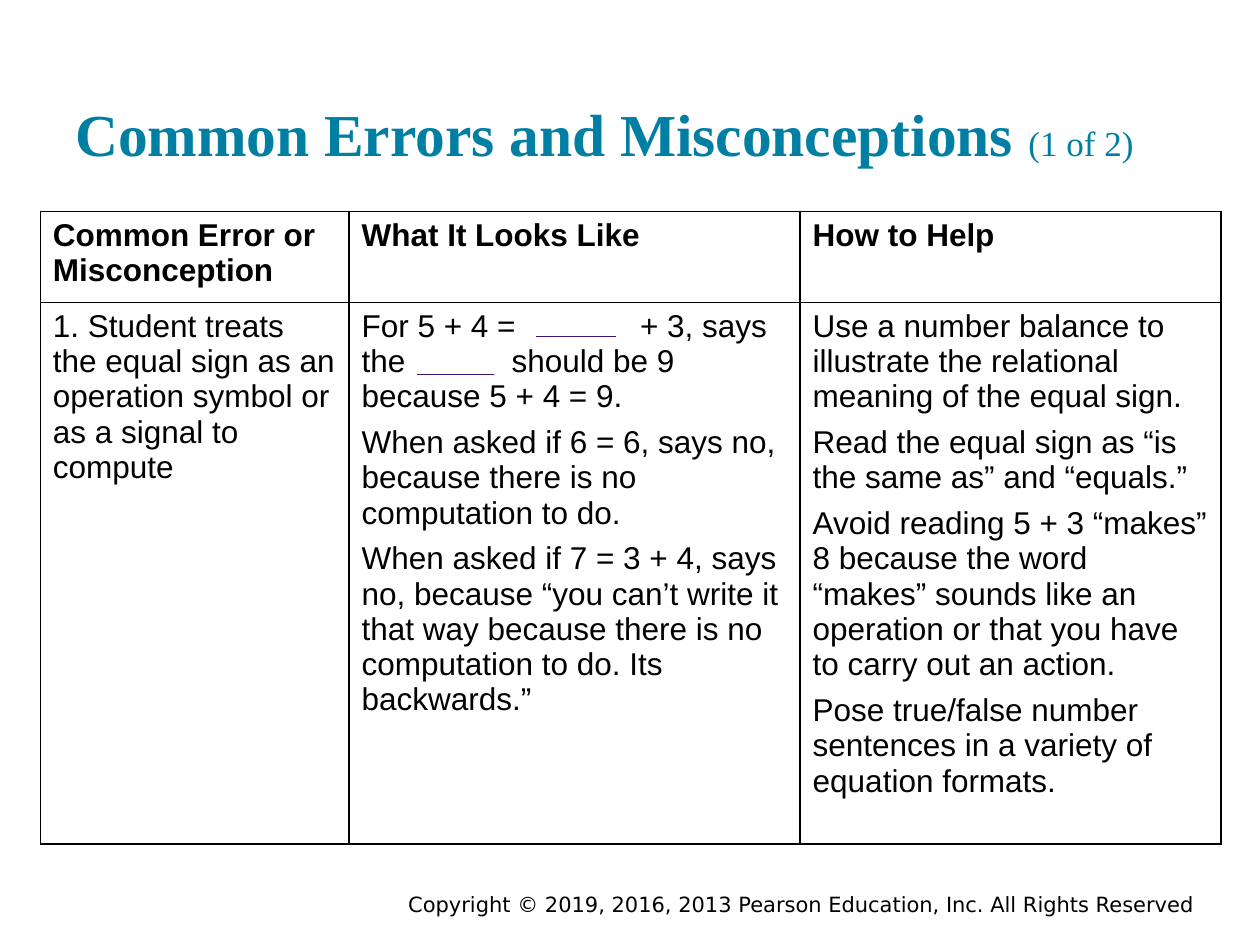
from lxml import etree
from pptx import Presentation
from pptx.dml.color import RGBColor
from pptx.enum.shapes import MSO_CONNECTOR
from pptx.enum.text import MSO_ANCHOR, PP_ALIGN
from pptx.oxml.ns import qn
from pptx.util import Inches, Pt

COLORS = {"title": "007FA3", "text": "000000", "border": "000000", "blank": "3A1281"}


def style(font, name, size, color, bold=False):
    font.name, font.size, font.bold = name, Pt(size), bold
    font.color.rgb = RGBColor.from_string(COLORS[color])


def add_text_box(left, top, width, height, anchor):
    frame = slide.shapes.add_textbox(*map(Inches, (left, top, width, height))).text_frame
    frame.word_wrap = True
    frame.vertical_anchor = anchor
    return frame


presentation = Presentation()
presentation.slide_width, presentation.slide_height = Inches(10), Inches(7.5)
slide = presentation.slides.add_slide(presentation.slide_layouts[6])

# Copyright line
frame = add_text_box(2.92, 7.05, 6.66, 0.25, MSO_ANCHOR.MIDDLE)
paragraph = frame.paragraphs[0]
paragraph.text = "Copyright © 2019, 2016, 2013 Pearson Education, Inc. All Rights Reserved"
paragraph.alignment = PP_ALIGN.RIGHT
style(paragraph.font, "DejaVu Sans", 12, "text")

# Title
frame = add_text_box(0.5, 0.24, 9, 1.2, MSO_ANCHOR.BOTTOM)
frame.margin_top = frame.margin_bottom = Inches(0.1)
for text, size, bold in [("Common Errors and Misconceptions ", 34, True), ("(1 of 2)", 20, False)]:
    run = frame.paragraphs[0].add_run()
    run.text = text
    style(run.font, "Times New Roman", size, "title", bold)

# Table: each cell is a list of paragraphs
rows = [
    [["Common Error or", "Misconception"], ["What It Looks Like"], ["How to Help"]],
    [
        ["1. Student treats the equal sign as an operation symbol or as a signal to compute"],
        [
            "For 5 + 4 =\t+ 3, says the\tshould be 9 because 5 + 4 = 9.",
            "When asked if 6 = 6, says no, because there is no computation to do.",
            "When asked if 7 = 3 + 4, says no, because “you can’t write it that way "
            "because there is no computation to do. Its backwards.”",
        ],
        [
            "Use a number balance to illustrate the relational meaning of the equal sign.",
            "Read the equal sign as “is the same as” and “equals.”",
            "Avoid reading 5 + 3 “makes” 8 because the word “makes” sounds like an "
            "operation or that you have to carry out an action.",
            "Pose true/false number sentences in a variety of equation formats.",
        ],
    ],
]
column_widths = [2.45, 3.58, 3.34]
row_heights = [0.72, 4.3]
blank_tabs = [1.19, 2.21]  # where the text resumes after each blank

table = slide.shapes.add_table(
    len(rows), len(column_widths), Inches(0.32), Inches(1.68),
    Inches(sum(column_widths)), Inches(sum(row_heights))).table
for column, width in zip(table.columns, column_widths):
    column.width = Inches(width)
for row, height in zip(table.rows, row_heights):
    row.height = Inches(height)

for row_index, row in enumerate(rows):
    for column_index, texts in enumerate(row):
        cell = table.cell(row_index, column_index)
        # Borders come before the fill in the cell properties
        properties = cell._tc.get_or_add_tcPr()
        for side in ("a:lnL", "a:lnR", "a:lnT", "a:lnB"):
            border = etree.SubElement(properties, qn(side), w=str(Pt(1)))
            fill = etree.SubElement(border, qn("a:solidFill"))
            etree.SubElement(fill, qn("a:srgbClr"), val=COLORS["border"])
        cell.fill.background()

        for index, text in enumerate(texts):
            frame = cell.text_frame
            paragraph = frame.add_paragraph() if index else frame.paragraphs[0]
            paragraph.text = text
            if index and row_index:
                paragraph.space_before = Pt(6)
            if "\t" in text:
                tab_list = etree.SubElement(paragraph._p.get_or_add_pPr(), qn("a:tabLst"))
                for position in blank_tabs:
                    etree.SubElement(tab_list, qn("a:tab"), pos=str(Inches(position)), algn="l")
            style(paragraph.font, "Arial", 18, "text", bold=row_index == 0)

# Blanks to fill in
for left, right, y in [(4.25, 4.89, 2.67), (3.31, 3.92, 2.97)]:
    blank = slide.shapes.add_connector(
        MSO_CONNECTOR.STRAIGHT, Inches(left), Inches(y), Inches(right), Inches(y))
    blank.line.color.rgb = RGBColor.from_string(COLORS["blank"])
    blank.line.width = Pt(0.75)
    etree.SubElement(blank._element.spPr, qn("a:effectLst"))

presentation.save("out.pptx")
